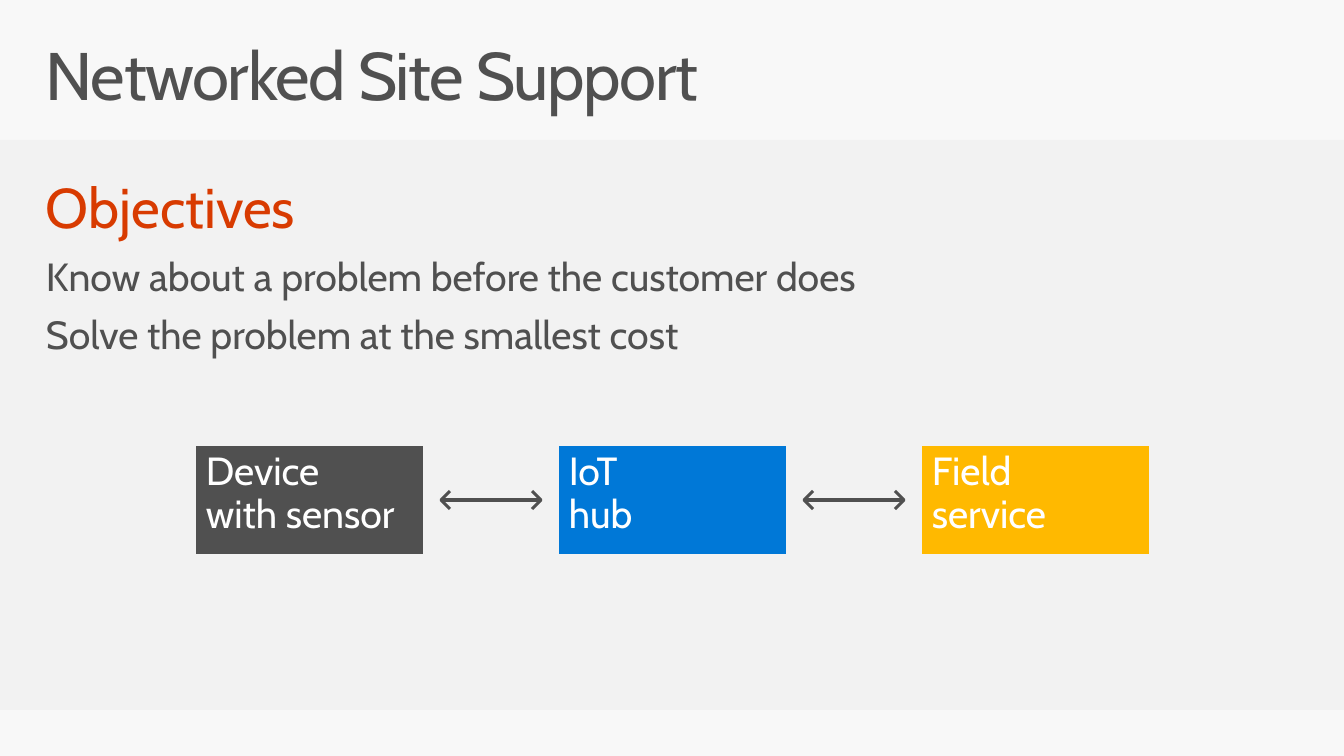
from pptx import Presentation, util as u
from pptx.dml.color import RGBColor
from pptx.enum import shapes, text
from pptx.oxml.ns import qn
from lxml import etree

# Content
TITLE = "Networked Site Support"
# wording, size, colour, space before, space after
GOALS = [
    ("Objectives", 40.8, "orange", 0, 0),
    ("Know about a problem before the customer does", 28.6, "dark", 12.2, 6.1),
    ("Solve the problem at the smallest cost", 28.6, "dark", 5.7, 6.1),
]
STEPS = [
    ("Device\nwith sensor", "dark"),
    ("IoT\nhub", "blue"),
    ("Field\nservice", "gold"),
]
HEX = {"page": "F8F8F8", "band": "F2F2F2", "dark": "505050", "orange": "D83B01",
       "blue": "0078D7", "gold": "FFB900", "white": "FFFFFF"}
FONT = "Cabin"

# Layout in px
WIDE, HIGH = 1344, 756
LEFT, TOP, BOX_W, BOX_H, PITCH = 186, 436, 247, 128, 363
MID = TOP + BOX_H // 2
INSET, HEAD = 8, 9


def px(n):
    return u.Emu(n * 9255)


def color(name):
    return RGBColor.from_string(HEX[name])


def style(para, size, name, before=0, after=0):
    para.alignment = text.PP_ALIGN.LEFT
    para.line_spacing = 0.9
    para.space_before, para.space_after = u.Pt(before), u.Pt(after)
    for run in para.runs:
        run.font.name, run.font.size = FONT, u.Pt(size)
        run.font.color.rgb = color(name)


def pad(frame, side, top):
    frame.word_wrap = True
    frame.vertical_anchor = text.MSO_ANCHOR.TOP
    frame.margin_left = frame.margin_right = px(side)
    frame.margin_top = frame.margin_bottom = px(top)


def label(x, y, w, h, words):
    frame = slide.shapes.add_textbox(px(x), px(y), px(w), px(h)).text_frame
    pad(frame, 16, 10)
    frame.text = words
    return frame


def block(x, y, w, h, fill):
    rect = slide.shapes.add_shape(shapes.MSO_SHAPE.RECTANGLE, px(x), px(y), px(w), px(h))
    rect.shadow.inherit = False
    rect.fill.solid()
    rect.fill.fore_color.rgb = color(fill)
    rect.line.fill.background()
    return rect


def ink(line, name, width):
    line.color.rgb = color(name)
    line.width = u.Pt(width)


def head(tip, back):
    pen = slide.shapes.build_freeform(px(back), px(MID - HEAD))
    pen.add_line_segments([(px(tip), px(MID)), (px(back), px(MID + HEAD))], close=False)
    mark = pen.convert_to_shape()
    mark.shadow.inherit = False
    mark.fill.background()
    ink(mark.line, "dark", 2.25)


deck = Presentation()
deck.slide_width, deck.slide_height = px(WIDE), px(HIGH)
slide = deck.slides.add_slide(deck.slide_layouts[6])
slide.background.fill.solid()
slide.background.fill.fore_color.rgb = color("page")

# Band, and the line that runs behind the boxes
block(0, 140, WIDE, 570, "band")
last = LEFT + PITCH * (len(STEPS) - 1)
link = slide.shapes.add_connector(
    shapes.MSO_CONNECTOR.STRAIGHT, px(LEFT + BOX_W // 2), px(MID), px(last + BOX_W // 2), px(MID))
ink(link.line, "dark", 2.25)
etree.SubElement(link._element.spPr, qn("a:effectLst"))

# Title
title = label(30, 32, 1284, 99, TITLE).paragraphs[0]
style(title, 49, "dark")
title.runs[0]._r.get_or_add_rPr().set("spc", "-100")

# Objectives
goals = label(30, 170, 1284, 205, "\n".join(goal[0] for goal in GOALS))
for para, goal in zip(goals.paragraphs, GOALS):
    style(para, *goal[1:])

# Boxes
for i, (words, fill) in enumerate(STEPS):
    box = block(LEFT + i * PITCH, TOP, BOX_W, BOX_H, fill)
    ink(box.line, "band", 14)
    pad(box.text_frame, 20, 16)
    box.text_frame.text = words
    for para in box.text_frame.paragraphs:
        style(para, 28.6, "white")

# Arrowheads at both ends of each gap
for i in range(len(STEPS) - 1):
    start = LEFT + i * PITCH + BOX_W + INSET
    end = LEFT + (i + 1) * PITCH - INSET
    head(start, start + HEAD)
    head(end, end - HEAD)

deck.save("out.pptx")
